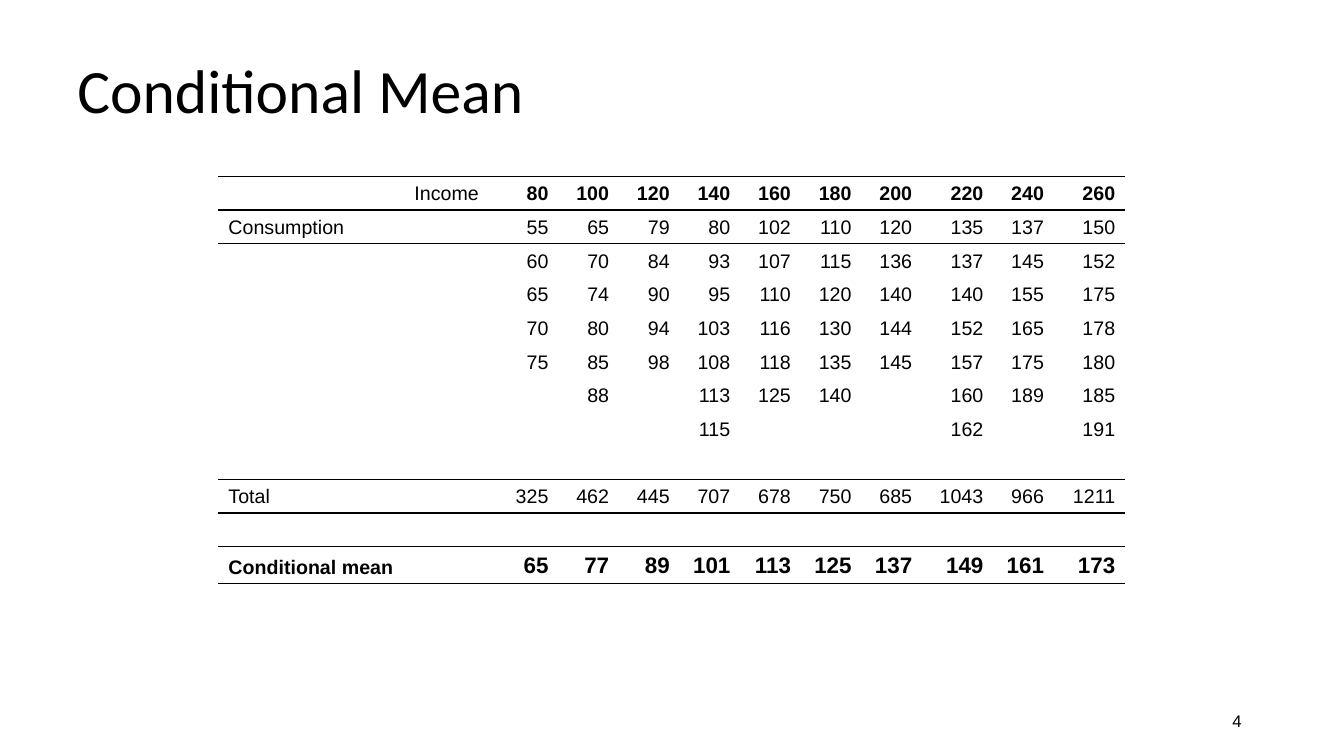
from lxml import etree
from pptx import Presentation
from pptx.dml.color import RGBColor
from pptx.enum.text import MSO_ANCHOR, PP_ALIGN
from pptx.oxml.ns import qn
from pptx.util import Inches, Pt

LEFT, RIGHT = PP_ALIGN.LEFT, PP_ALIGN.RIGHT
MIDDLE, BOTTOM = MSO_ANCHOR.MIDDLE, MSO_ANCHOR.BOTTOM
GRID_COLUMNS, GRID_ROWS = 80, 60
TITLE_ONLY = 5
PLAIN_TABLE_STYLE = "{2D5ABB26-0587-4C30-8999-92F81FD0307C}"

INCOMES = [80, 100, 120, 140, 160, 180, 200, 220, 240, 260]
CONSUMPTION = [
    [55, 65, 79, 80, 102, 110, 120, 135, 137, 150],
    [60, 70, 84, 93, 107, 115, 136, 137, 145, 152],
    [65, 74, 90, 95, 110, 120, 140, 140, 155, 175],
    [70, 80, 94, 103, 116, 130, 144, 152, 165, 178],
    [75, 85, 98, 108, 118, 135, 145, 157, 175, 180],
    ["", 88, "", 113, 125, 140, "", 160, 189, 185],
    ["", "", "", 115, "", "", "", 162, "", 191],
]
TOTALS = [325, 462, 445, 707, 678, 750, 685, 1043, 966, 1211]
MEANS = [65, 77, 89, 101, 113, 125, 137, 149, 161, 173]
BLANK_ROW = [""] * (len(INCOMES) + 2)
TABLE_ROWS = [
    ["", "Income", *INCOMES],
    ["Consumption", "", *CONSUMPTION[0]],
    *[["", "", *values] for values in CONSUMPTION[1:]],
    BLANK_ROW,
    ["Total", "", *TOTALS],
    BLANK_ROW,
    ["Conditional mean", "", *MEANS],
]
COLUMN_SPANS = [11.07, 5.57] + [3.61] * 7 + [4.24, 3.61, 4.24]
ROW_SPANS = [2.67] * 11 + [2.93]
HEADER_ROW, MEAN_ROW = 0, len(TABLE_ROWS) - 1
RULES_ABOVE = {0, 1, 9, 10, 11, 12}


def color(value):
    return RGBColor.from_string(value)


class SlideBuilder:
    ink = "000000"
    title_font = "Calibri"
    body_font = "Arial"

    def __init__(self, presentation):
        self.column = presentation.slide_width / GRID_COLUMNS
        self.row = presentation.slide_height / GRID_ROWS
        layout = presentation.slide_layouts[TITLE_ONLY]
        self.slide = presentation.slides.add_slide(layout)

    def box(self, left, top, width, height):
        return (round(left * self.column), round(top * self.row),
                round(width * self.column), round(height * self.row))

    def format(self, paragraph, size, font, bold=False, alignment=LEFT):
        paragraph.alignment = alignment
        for run in paragraph.runs:
            run.font.size = Pt(size)
            run.font.name = font
            run.font.bold = bold
            run.font.color.rgb = color(self.ink)

    def title(self, text, left, top, width, height):
        shape = self.slide.shapes.title
        shape.left, shape.top, shape.width, shape.height = self.box(left, top, width, height)
        frame = shape.text_frame
        frame.text = text
        frame.vertical_anchor = MIDDLE
        frame.paragraphs[0].line_spacing = 0.9
        self.format(frame.paragraphs[0], 44, self.title_font)

    def page_number(self, text, left, top, width, height):
        shape = self.slide.shapes.add_textbox(*self.box(left, top, width, height))
        frame = shape.text_frame
        frame.word_wrap = True
        frame.text = text
        frame.vertical_anchor = MIDDLE
        self.format(frame.paragraphs[0], 12, self.body_font, alignment=RIGHT)

    def rule(self, cell, side):
        line = etree.Element(qn(f"a:{side}"), w=str(Pt(1)))
        fill = etree.SubElement(line, qn("a:solidFill"))
        etree.SubElement(fill, qn("a:srgbClr"), val=self.ink)
        properties = cell._tc.get_or_add_tcPr()
        properties.insert(len(properties) - 1, line)

    def cell(self, cell, text, size, bold, alignment):
        cell.text_frame.text = text
        cell.vertical_anchor = BOTTOM
        cell.fill.background()
        paragraph = cell.text_frame.paragraphs[0]
        self.format(paragraph, size, self.body_font, bold, alignment)
        if not text:
            ending = etree.SubElement(paragraph._p, qn("a:endParaRPr"), sz=str(size * 100))
            etree.SubElement(ending, qn("a:latin"), typeface=self.body_font)

    def table(self, rows, left, top, column_spans, row_spans):
        area = self.box(left, top, sum(column_spans), sum(row_spans))
        table = self.slide.shapes.add_table(len(rows), len(column_spans), *area).table
        table.first_row = table.horz_banding = False
        table._tbl.tblPr.find(qn("a:tableStyleId")).text = PLAIN_TABLE_STYLE
        for column, span in zip(table.columns, column_spans):
            column.width = round(span * self.column)
        for row, span in zip(table.rows, row_spans):
            row.height = round(span * self.row)
        for row_index, values in enumerate(rows):
            for column_index, value in enumerate(values):
                cell = table.cell(row_index, column_index)
                number = column_index > 1
                mean = row_index == MEAN_ROW
                bold = mean or (row_index == HEADER_ROW and number)
                self.cell(cell, str(value), 16 if mean and number else 14,
                          bold, RIGHT if number else LEFT)
                if row_index in RULES_ABOVE:
                    self.rule(cell, "lnT")
                if row_index + 1 in RULES_ABOVE:
                    self.rule(cell, "lnB")


def main():
    presentation = Presentation()
    presentation.slide_width = Inches(13.33)
    presentation.slide_height = Inches(7.5)
    builder = SlideBuilder(presentation)
    builder.page_number("4", 56.5, 55.6, 18, 3.2)
    builder.title("Conditional Mean", 4, 2.4, 72, 10)
    builder.table(TABLE_ROWS, 13, 14, COLUMN_SPANS, ROW_SPANS)
    presentation.save("out.pptx")


if __name__ == "__main__":
    main()
